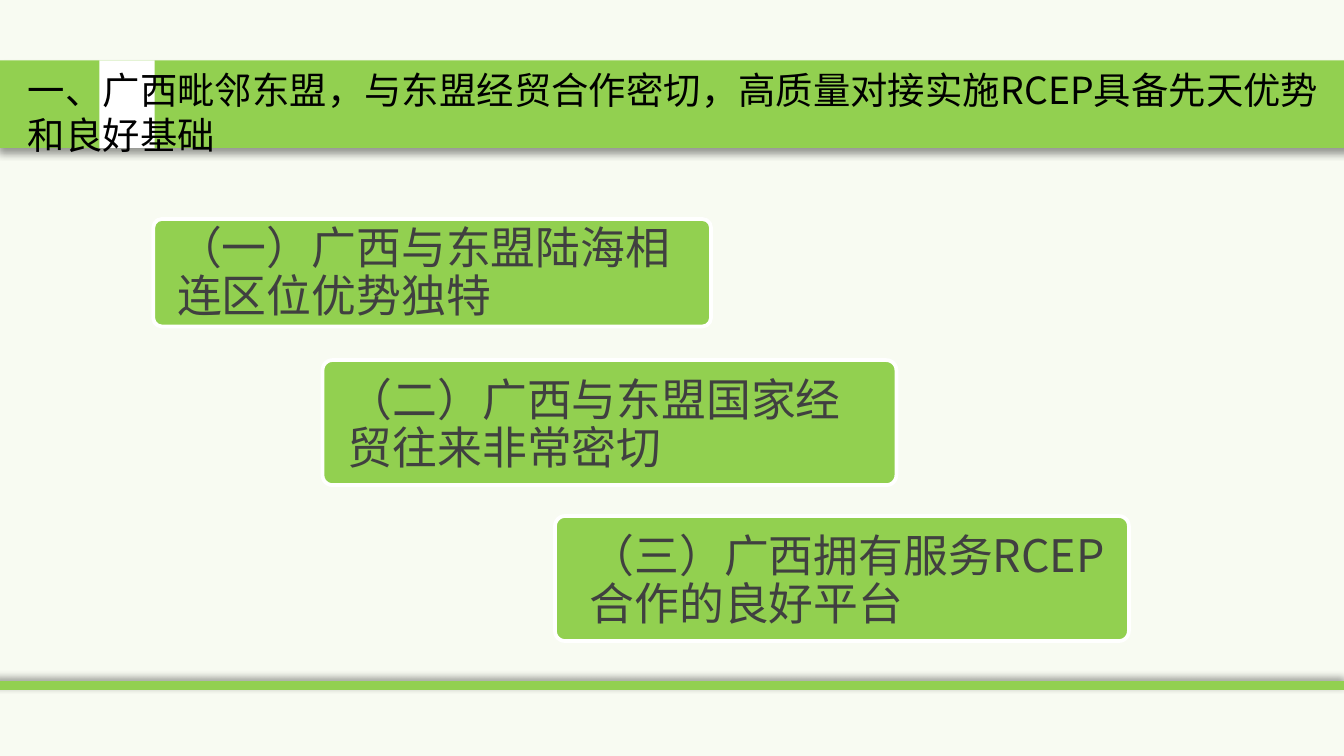
"""Build the slide on Guangxi's advantages in implementing RCEP."""
from dataclasses import dataclass

from lxml.etree import SubElement
from pptx import Presentation
from pptx.dml.color import RGBColor
from pptx.enum.shapes import MSO_CONNECTOR, MSO_SHAPE
from pptx.enum.text import MSO_AUTO_SIZE
from pptx.oxml.ns import qn
from pptx.util import Inches, Pt


@dataclass(frozen=True)
class Theme:
    font: str = "Noto Sans CJK SC"
    background: RGBColor = RGBColor(0xF8, 0xFB, 0xF2)
    green: RGBColor = RGBColor(0x92, 0xD0, 0x50)
    white: RGBColor = RGBColor(0xFF, 0xFF, 0xFF)
    title: RGBColor = RGBColor(0, 0, 0)
    body: RGBColor = RGBColor(0x40, 0x40, 0x40)
    title_size: int = 20
    body_size: int = 24
    title_spacing: float = 1.0
    body_spacing: float = 0.9


@dataclass(frozen=True)
class Box:
    left: float
    top: float
    width: float
    height: float

    def lengths(self) -> tuple:
        return tuple(map(Inches, (self.left, self.top, self.width, self.height)))


@dataclass(frozen=True)
class Point:
    card: Box
    label: Box
    text: str


THEME = Theme()
TITLE = "一、广西毗邻东盟，与东盟经贸合作密切，高质量对接实施RCEP具备先天优势和良好基础"
POINTS = (
    Point(Box(1.14, 1.63, 4.15, 0.8), Box(1.22, 1.63, 4.02, 0.83),
          "（一）广西与东盟陆海相连区位优势独特"),
    Point(Box(2.4, 2.68, 4.27, 0.93), Box(2.49, 2.76, 4.1, 0.83),
          "（二）广西与东盟国家经贸往来非常密切"),
    Point(Box(4.13, 3.84, 4.27, 0.93), Box(4.29, 3.92, 4.1, 0.83),
          "（三）广西拥有服务RCEP合作的良好平台"),
)


def add_shadow(shape, direction: int) -> None:
    """Add a soft black shadow falling in the given direction in degrees."""
    effects = SubElement(shape._element.spPr, qn("a:effectLst"))
    shadow = SubElement(effects, qn("a:outerShdw"), blurRad=str(Pt(4)),
                        dist=str(Pt(3)), dir=str(direction * 60000),
                        algn="t", rotWithShape="0")
    color = SubElement(shadow, qn("a:srgbClr"), val="000000")
    SubElement(color, qn("a:alpha"), val="40000")


def add_block(slide, box: Box, fill: RGBColor, kind=MSO_SHAPE.RECTANGLE):
    """Draw a filled shape without an outline."""
    shape = slide.shapes.add_shape(kind, *box.lengths())
    shape.fill.solid()
    shape.fill.fore_color.rgb = fill
    shape.line.fill.background()
    return shape


def add_text(slide, box: Box, text: str, size: int, color: RGBColor, spacing: float) -> None:
    """Write one wrapped paragraph in a text box."""
    frame = slide.shapes.add_textbox(*box.lengths()).text_frame
    frame.word_wrap = True
    frame.auto_size = MSO_AUTO_SIZE.SHAPE_TO_FIT_TEXT
    paragraph = frame.paragraphs[0]
    paragraph.line_spacing = spacing
    run = paragraph.add_run()
    run.text = text
    for name, value in {"name": THEME.font, "size": Pt(size)}.items():
        setattr(run.font, name, value)
    run.font.color.rgb = color
    SubElement(run.font._element, qn("a:ea"), typeface=THEME.font)


def add_frame(slide) -> None:
    """Draw the header band and the footer rule."""
    band = add_block(slide, Box(-0.01, 0.45, 10.05, 0.65), THEME.green)
    add_shadow(band, 90)
    tab = add_block(slide, Box(0.74, 0.45, 0.41, 0.65), THEME.white)
    tab.shadow.inherit = False
    rule = slide.shapes.add_connector(
        MSO_CONNECTOR.STRAIGHT, *map(Inches, (-0.02, 5.1, 10.02, 5.1)))
    rule.line.color.rgb = THEME.green
    rule.line.width = Pt(4.5)
    add_shadow(rule, 225)


def add_point(slide, point: Point) -> None:
    """Draw a rounded card with its label."""
    card = add_block(slide, point.card, THEME.green, MSO_SHAPE.ROUNDED_RECTANGLE)
    card.shadow.inherit = False
    card.adjustments[0] = 0.08
    card.line.color.rgb = THEME.white
    card.line.width = Pt(2)
    add_text(slide, point.label, point.text, THEME.body_size, THEME.body, THEME.body_spacing)


def main() -> None:
    """Assemble and save the presentation."""
    presentation = Presentation()
    presentation.slide_width = Inches(10)
    presentation.slide_height = Inches(10) * 9 // 16
    slide = presentation.slides.add_slide(presentation.slide_layouts[6])
    slide.background.fill.solid()
    slide.background.fill.fore_color.rgb = THEME.background
    add_frame(slide)
    add_text(slide, Box(0.11, 0.45, 9.9, 0.77), TITLE,
             THEME.title_size, THEME.title, THEME.title_spacing)
    for point in POINTS:
        add_point(slide, point)
    presentation.save("out.pptx")


if __name__ == "__main__":
    main()
